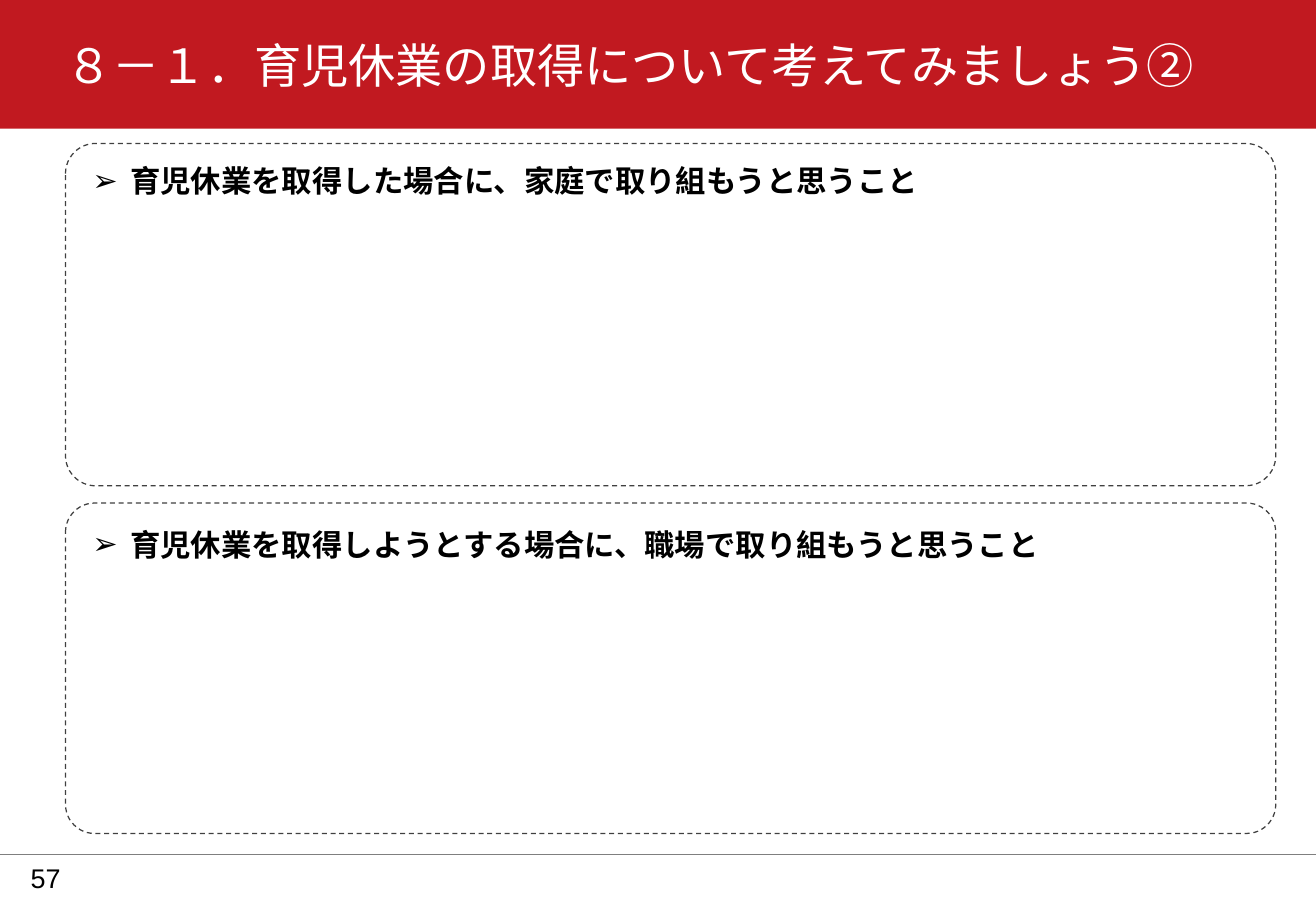
import pptx
import pptx.dml.color
import pptx.enum.dml
import pptx.enum.shapes
import pptx.enum.text
import pptx.util
from lxml import etree
from pptx.oxml import ns
from pptx.util import Cm, Pt

RED = pptx.dml.color.RGBColor(0xC1, 0x19, 0x20)
WHITE = pptx.dml.color.RGBColor(0xFF, 0xFF, 0xFF)
BLACK = pptx.dml.color.RGBColor(0, 0, 0)
DARK_GREY = pptx.dml.color.RGBColor(0x40, 0x40, 0x40)
GREY = pptx.dml.color.RGBColor(0x7F, 0x7F, 0x7F)
LATIN_FONT = "Arial"
JAPANESE_FONT = "Noto Sans CJK JP"
SHAPES = pptx.enum.shapes.MSO_SHAPE
ANCHOR = pptx.enum.text.MSO_ANCHOR

WIDTH, HEIGHT = Cm(27.51), Cm(19.05)
MARGIN = Cm(1.37)
BULLET_INDENT = Cm(0.79)


def add_text(slide, box, text, size, color, font=LATIN_FONT, bold=False,
             insets=(0, 0), anchor=ANCHOR.TOP, bullet=None):
    """Place one paragraph in box; insets are the top and bottom ones."""
    frame = slide.shapes.add_textbox(*box).text_frame
    frame.word_wrap = True
    frame.vertical_anchor = anchor
    frame.margin_left = frame.margin_right = 0
    frame.margin_top, frame.margin_bottom = insets
    paragraph = frame.paragraphs[0]
    paragraph.text = text
    if bullet:
        properties = paragraph._p.get_or_add_pPr()
        properties.set("marL", str(BULLET_INDENT))
        properties.set("indent", str(-BULLET_INDENT))
        etree.SubElement(properties, ns.qn("a:buFont"), typeface=LATIN_FONT)
        etree.SubElement(properties, ns.qn("a:buChar"), char=bullet)
    paragraph.font.name = font
    paragraph.font.size = Pt(size)
    paragraph.font.bold = bold
    paragraph.font.color.rgb = color


def add_header(slide, left, top, width, height, title):
    band = slide.shapes.add_shape(SHAPES.RECTANGLE, left, top, width, height)
    band.shadow.inherit = False
    band.fill.solid()
    band.fill.fore_color.rgb = RED
    band.line.fill.background()
    title_box = (left + MARGIN, top + Cm(0.76), width - MARGIN, Cm(1.8))
    add_text(slide, title_box, title, 28, WHITE, insets=(0, Cm(0.15)))


def add_answer_panel(slide, left, top, width, height, prompt, prompt_offset):
    """Draw a dashed writing area with its prompt at the top."""
    panel = slide.shapes.add_shape(SHAPES.ROUNDED_RECTANGLE, left, top, width, height)
    panel.adjustments[0] = 0.088
    panel.shadow.inherit = False
    panel.fill.background()
    panel.line.color.rgb = DARK_GREY
    panel.line.width = Pt(0.75)
    panel.line.dash_style = pptx.enum.dml.MSO_LINE.DASH
    padding = Cm(0.56)
    prompt_box = (left + padding, top + prompt_offset, width - 2 * padding, Cm(1.65))
    add_text(slide, prompt_box, prompt, 18, BLACK, JAPANESE_FONT, bold=True,
             insets=(Cm(0.15), Cm(0.15)), bullet="➢")


def add_footer(slide, left, top, width, height, page_number):
    rule = slide.shapes.add_connector(
        pptx.enum.shapes.MSO_CONNECTOR.STRAIGHT, left, top, left + width, top)
    rule.line.color.rgb = GREY
    rule.line.width = Pt(0.25)
    etree.SubElement(rule._element.spPr, ns.qn("a:effectLst"))
    number_box = (left + Cm(0.64), top, Cm(1.02), height)
    add_text(slide, number_box, page_number, 16, BLACK,
             insets=(Cm(0.13), Cm(0.13)), anchor=ANCHOR.MIDDLE)


def main():
    presentation = pptx.Presentation()
    presentation.slide_width, presentation.slide_height = WIDTH, HEIGHT
    slide = presentation.slides.add_slide(presentation.slide_layouts[6])

    add_header(slide, 0, 0, WIDTH, Cm(2.69),
               "８－１．育児休業の取得について考えてみましょう②")
    panels = (
        (Cm(3), Cm(7.16), "育児休業を取得した場合に、家庭で取り組もうと思うこと", Cm(0.25)),
        (Cm(10.52), Cm(6.91), "育児休業を取得しようとする場合に、職場で取り組もうと思うこと", Cm(0.33)),
    )
    for top, height, prompt, prompt_offset in panels:
        add_answer_panel(slide, MARGIN, top, Cm(25.3), height, prompt, prompt_offset)
    add_footer(slide, 0, Cm(17.86), WIDTH, Cm(0.99), "57")

    presentation.save("out.pptx")


if __name__ == "__main__":
    main()
